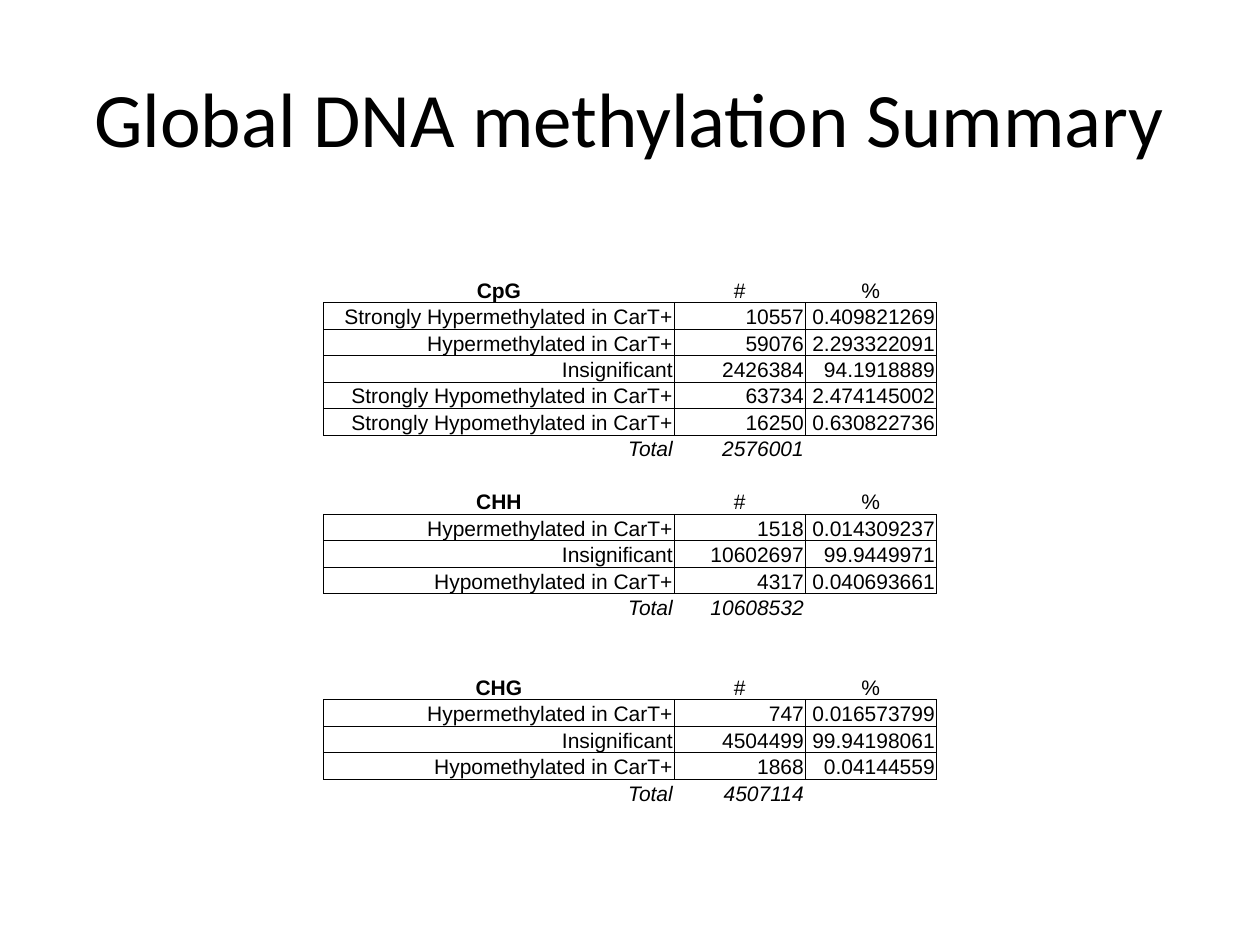
from lxml.etree import SubElement
from pptx import Presentation
from pptx.dml.color import RGBColor
from pptx.enum.text import MSO_ANCHOR, PP_ALIGN
from pptx.oxml.ns import qn
from pptx.util import Inches, Pt

COLORS = {"ink": "000000"}
ROW_HEIGHT = Pt(15)
COLUMN_WIDTHS = [Inches(2.78), Inches(1.04), Inches(1.04)]
CELL_FORMAT = {
    "vertical_anchor": MSO_ANCHOR.BOTTOM,
    "margin_left": Inches(0.01),
    "margin_right": Inches(0.01),
    "margin_top": Inches(0.01),
    "margin_bottom": 0,
}
CONTEXTS = [
    ("CpG", [
        ("Strongly Hypermethylated in CarT+", "10557", "0.409821269"),
        ("Hypermethylated in CarT+", "59076", "2.293322091"),
        ("Insignificant", "2426384", "94.1918889"),
        ("Strongly Hypomethylated in CarT+", "63734", "2.474145002"),
        ("Strongly Hypomethylated in CarT+", "16250", "0.630822736"),
    ], "2576001", 1),
    ("CHH", [
        ("Hypermethylated in CarT+", "1518", "0.014309237"),
        ("Insignificant", "10602697", "99.9449971"),
        ("Hypomethylated in CarT+", "4317", "0.040693661"),
    ], "10608532", 2),
    ("CHG", [
        ("Hypermethylated in CarT+", "747", "0.016573799"),
        ("Insignificant", "4504499", "99.94198061"),
        ("Hypomethylated in CarT+", "1868", "0.04144559"),
    ], "4507114", 0),
]
BORDERS = {"header": "B", "data": "LRTB", "total": "T", "gap": ""}


def write_text(para, text, align, **font_format):
    para.alignment = align
    span = para.add_run()
    span.text = text
    span.font.color.rgb = RGBColor.from_string(COLORS["ink"])
    for name, value in font_format.items():
        setattr(span.font, name, value)


def draw_borders(cell, visible_sides):
    properties = cell._tc.get_or_add_tcPr()
    for side in "LRTB":
        line = SubElement(properties, qn(f"a:ln{side}"), w=str(Pt(0.5)))
        if side in visible_sides:
            fill = SubElement(line, qn("a:solidFill"))
            SubElement(fill, qn("a:srgbClr"), val=COLORS["ink"])
        else:
            SubElement(line, qn("a:noFill"))


deck = Presentation()
deck.slide_width, deck.slide_height = Inches(10), Inches(7.5)
width, height = deck.slide_width, deck.slide_height
page = deck.slides.add_slide(deck.slide_layouts[6])

title = page.shapes.add_textbox(
    int(width * 0.05), int(height * 0.04), int(width * 0.9), height // 6
)
title.text_frame.word_wrap = True
title.text_frame.vertical_anchor = MSO_ANCHOR.MIDDLE
write_text(title.text_frame.paragraphs[0], "Global DNA methylation Summary",
           PP_ALIGN.CENTER, name="Calibri", size=Pt(44))

rows = []
for context, counts, total, gap in CONTEXTS:
    rows.append(("header", (context, "#", "%")))
    rows.extend(("data", count) for count in counts)
    rows.append(("total", ("Total", total, "")))
    rows.extend([("gap", ("", "", ""))] * gap)

table_width = sum(COLUMN_WIDTHS)
table = page.shapes.add_table(
    len(rows), len(COLUMN_WIDTHS), (width - table_width) // 2, Inches(2.19),
    table_width, ROW_HEIGHT * len(rows)
).table
table.first_row = table.horz_banding = False
for column, column_width in zip(table.columns, COLUMN_WIDTHS):
    column.width = column_width

for row_index, (kind, texts) in enumerate(rows):
    table.rows[row_index].height = ROW_HEIGHT
    for column_index, text in enumerate(texts):
        cell = table.cell(row_index, column_index)
        for name, value in CELL_FORMAT.items():
            setattr(cell, name, value)
        draw_borders(cell, BORDERS[kind])
        cell.fill.background()
        para = cell.text_frame.paragraphs[0]
        if text:
            write_text(para, text,
                       PP_ALIGN.CENTER if kind == "header" else PP_ALIGN.RIGHT,
                       name="Arial", size=Pt(12), italic=kind == "total",
                       bold=kind == "header" and column_index == 0)
        else:
            SubElement(para._p, qn("a:endParaRPr"), sz="1200")

deck.save("out.pptx")
